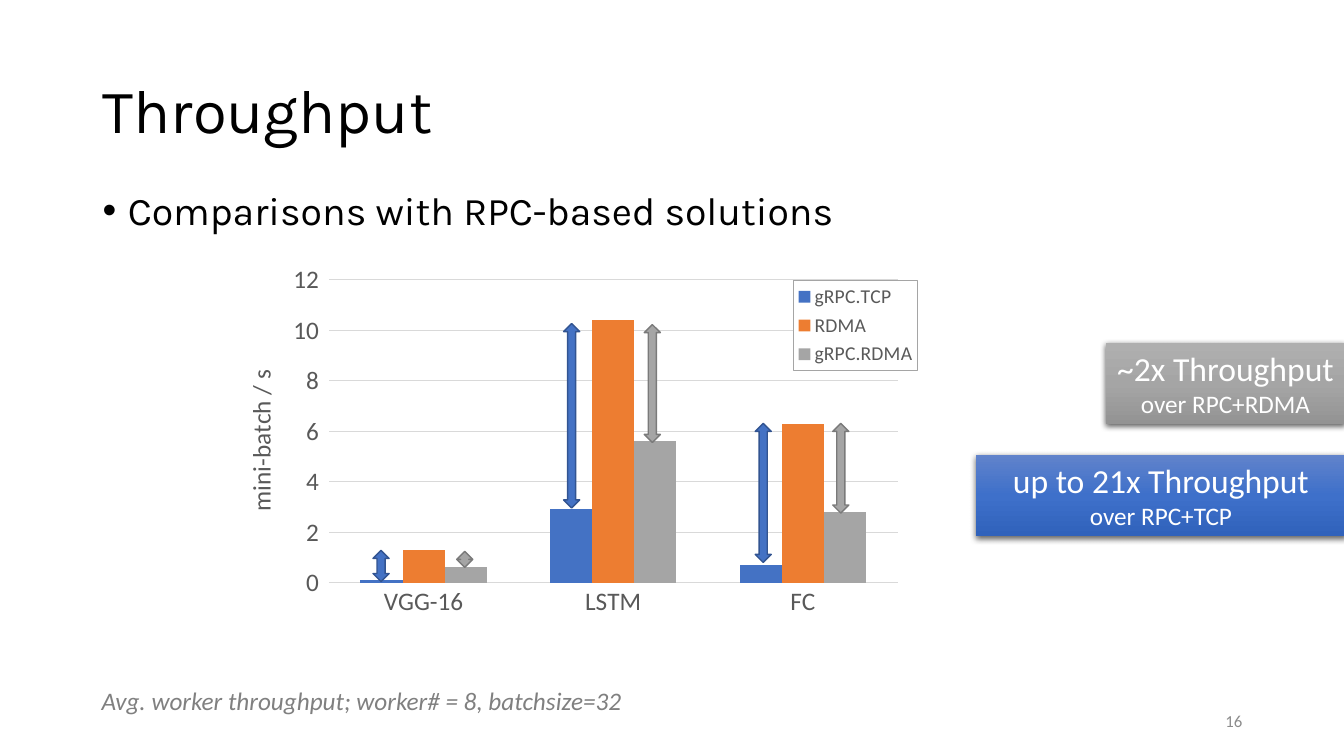
from copy import deepcopy
from lxml import etree
from pptx import Presentation
from pptx.chart.data import CategoryChartData
from pptx.dml.color import RGBColor
from pptx.enum.chart import XL_CHART_TYPE, XL_LEGEND_POSITION, XL_TICK_MARK
from pptx.enum.shapes import MSO_SHAPE
from pptx.enum.text import MSO_ANCHOR, PP_ALIGN
from pptx.oxml import parse_xml
from pptx.oxml.ns import nsdecls, qn
from pptx.util import Inches, Pt

COLUMN = XL_CHART_TYPE.COLUMN_CLUSTERED
RIGHT_KEY = XL_LEGEND_POSITION.RIGHT
NO_TICK, OUT_TICK = XL_TICK_MARK.NONE, XL_TICK_MARK.OUTSIDE
RECT, ARROW = MSO_SHAPE.RECTANGLE, MSO_SHAPE.UP_DOWN_ARROW
TOP, MIDDLE = MSO_ANCHOR.TOP, MSO_ANCHOR.MIDDLE
LEFT, CENTER, RIGHT = PP_ALIGN.LEFT, PP_ALIGN.CENTER, PP_ALIGN.RIGHT

COLORS = {
    "black": "000000", "white": "FFFFFF", "text": "595959", "grid": "D9D9D9",
    "note": "808080", "page": "8C8C8C", "blue": "4472C4", "orange": "ED7D31",
    "gray": "A5A5A5", "blue edge": "325491", "gray edge": "7A7A7A",
}
FADES = {
    "blue": ("6183CB", "3E70CA", "3062BB"),
    "gray": ("AFAFAF", "A5A5A5", "939393"),
}
MODELS = ("VGG-16", "LSTM", "FC")
SERIES = (
    ("gRPC.TCP", (0.1, 2.9, 0.7), "blue"),
    ("RDMA", (1.3, 10.4, 6.3), "orange"),
    ("gRPC.RDMA", (0.6, 5.6, 2.8), "gray"),
)
# Arrow offsets from the chart box: left, top, height, color
GAPS = (
    (1.33, 2.97, 0.31, "blue"), (2.16, 2.98, 0.16, "gray"),
    (3.22, 0.72, 1.83, "blue"), (4.02, 0.73, 1.17, "gray"),
    (5.12, 1.71, 1.38, "blue"), (5.89, 1.71, 0.89, "gray"),
)


def rgb(name):
    return RGBColor.from_string(COLORS[name])


def inches(box):
    return [Inches(n) for n in box]


def style(font, size, color, face="Calibri"):
    font.name, font.size, font.bold = face, Pt(size), False
    font.color.rgb = rgb(color)


def add_title(slide, box, text):
    title = slide.shapes.title
    title.left, title.top, title.width, title.height = inches(box)
    frame = title.text_frame
    frame.text = text
    frame.vertical_anchor = MIDDLE
    para = frame.paragraphs[0]
    para.alignment, para.line_spacing = LEFT, 0.9
    style(para.runs[0].font, 44, "black", "Karla")


def add_text(slide, box, text, size, color, face="Calibri",
             align=LEFT, anchor=TOP, wrap=True):
    frame = slide.shapes.add_textbox(*inches(box)).text_frame
    frame.word_wrap, frame.vertical_anchor = wrap, anchor
    frame.text = text
    para = frame.paragraphs[0]
    para.alignment = align
    style(para.runs[0].font, size, color, face)
    return para


def add_bullet(slide, box, text):
    para = add_text(slide, box, text, 28, "black", "Karla")
    para.line_spacing, para.space_before = 0.9, Pt(10)
    props = para._p.get_or_add_pPr()
    props.set("marL", str(Inches(0.25)))
    props.set("indent", str(Inches(-0.25)))
    etree.SubElement(props, qn("a:buFont")).set("typeface", "Arial")
    etree.SubElement(props, qn("a:buChar")).set("char", "•")


def place(part, target, frac):
    """Fix a chart part at fractions (x, y, w, h) of the chart box."""
    tags = [f'<c:layoutTarget val="{target}"/>'] if target else []
    tags += [f'<c:{k}Mode val="edge"/>' for k in "xy"]
    tags += [f'<c:{k} val="{v}"/>' for k, v in zip("xywh", frac)]
    layout = parse_xml(f'<c:layout {nsdecls("c")}><c:manualLayout>'
                       f'{"".join(tags)}</c:manualLayout></c:layout>')
    old = part.find(qn("c:layout"))
    if old is not None:
        part.remove(old)
    part.insert(1 if part.tag == qn("c:legend") else 0, layout)


def add_graph(slide, box):
    data = CategoryChartData()
    data.categories = MODELS
    for name, values, _ in SERIES:
        data.add_series(name, values)
    chart = slide.shapes.add_chart(COLUMN, *inches(box), data).chart
    chart.has_title = False
    style(chart.font, 18, "text")

    # Columns
    plot = chart.plots[0]
    plot.gap_width, plot.overlap, plot.vary_by_categories = 150, 0, False
    for bars, (_, _, color) in zip(plot.series, SERIES):
        bars.format.fill.solid()
        bars.format.fill.fore_color.rgb = rgb(color)
    place(chart._chartSpace.chart.plotArea, "inner",
          (0.126, 0.075, 0.798, 0.791))

    # Axes
    cat, val = chart.category_axis, chart.value_axis
    cat.major_tick_mark, val.major_tick_mark = NO_TICK, OUT_TICK
    val.minimum_scale, val.maximum_scale, val.major_unit = 0, 12, 2
    val.format.line.fill.background()
    for line in (cat.format.line, val.major_gridlines.format.line):
        line.color.rgb, line.width = rgb("grid"), Pt(0.75)
    for axis in (cat, val):
        style(axis.tick_labels.font, 18, "text")
    frame = val.axis_title.text_frame
    frame.text = "mini-batch / s"
    style(frame.paragraphs[0].runs[0].font, 18, "text")

    # Legend
    chart.has_legend = True
    key = chart.legend
    key.position, key.include_in_layout = RIGHT_KEY, False
    style(key.font, 14, "text")
    place(key._element, None, (0.778, 0.076, 0.174, 0.237))
    look = parse_xml(
        f'<c:spPr {nsdecls("c", "a")}><a:solidFill><a:srgbClr '
        f'val="{COLORS["white"]}"/></a:solidFill><a:ln w="9525"><a:solidFill>'
        f'<a:srgbClr val="{COLORS["gray"]}"/></a:solidFill></a:ln></c:spPr>')
    key._element.find(qn("c:txPr")).addprevious(look)


def add_gaps(slide, box):
    for left, top, height, color in GAPS:
        spot = inches((box[0] + left, box[1] + top, 0.16, height))
        arrow = slide.shapes.add_shape(ARROW, *spot)
        arrow.shadow.inherit = False
        arrow.fill.solid()
        arrow.fill.fore_color.rgb = rgb(color)
        arrow.line.color.rgb = rgb(color + " edge")
        arrow.line.width = Pt(1)


def add_banner(slide, box, color, head, sub, wrap):
    shape = slide.shapes.add_shape(RECT, *inches(box))
    shape.line.fill.background()
    # Three-stop fade, top to bottom
    fill = shape.fill
    fill.gradient()
    fill.gradient_angle = 270
    props = shape._element.spPr
    stops = props.find(".//" + qn("a:gsLst"))
    stops.append(deepcopy(stops[0]))
    for i, (stop, tone) in enumerate(zip(fill.gradient_stops, FADES[color])):
        stop.position = i / 2
        stop.color.rgb = RGBColor.from_string(tone)
    # Shadow
    shape.shadow.inherit = False
    props.find(qn("a:effectLst")).append(parse_xml(
        f'<a:outerShdw {nsdecls("a")} blurRad="{Pt(4.5)}" dist="{Pt(1.5)}" '
        f'dir="5400000" algn="ctr" rotWithShape="0"><a:srgbClr '
        f'val="{COLORS["black"]}"><a:alpha val="63000"/></a:srgbClr>'
        f'</a:outerShdw>'))
    # Two lines of text
    frame = shape.text_frame
    frame.word_wrap, frame.vertical_anchor = wrap, TOP
    frame.text = f"{head}\n{sub}"
    for para, size in zip(frame.paragraphs, (24, 18)):
        para.alignment = CENTER
        style(para.runs[0].font, size, "white")


def main():
    deck = Presentation()
    deck.slide_width, deck.slide_height = Inches(13.33), Inches(7.5)
    slide = deck.slides.add_slide(deck.slide_layouts[5])
    graph = (2.37, 2.49, 7.07, 3.8)
    add_graph(slide, graph)
    add_title(slide, (0.92, 0.4, 11.5, 1.45), "Throughput")
    add_bullet(slide, (0.92, 1.85, 11.5, 0.74),
               "Comparisons with RPC-based solutions")
    add_banner(slide, (10.97, 3.4, 2.37, 0.81), "gray",
               "~2x Throughput", "over RPC+RDMA", False)
    add_banner(slide, (9.68, 4.51, 3.67, 0.81), "blue",
               "up to 21x Throughput", "over RPC+TCP", True)
    add_text(slide, (9.42, 6.95, 3, 0.4), "16", 12, "page",
             align=RIGHT, anchor=MIDDLE)
    note = add_text(slide, (0.91, 6.75, 5.41, 0.4),
                    "Avg. worker throughput; worker# = 8, batchsize=32",
                    18, "note", wrap=False)
    note.runs[0].font.italic = True
    add_gaps(slide, graph)
    deck.save("out.pptx")


if __name__ == "__main__":
    main()
